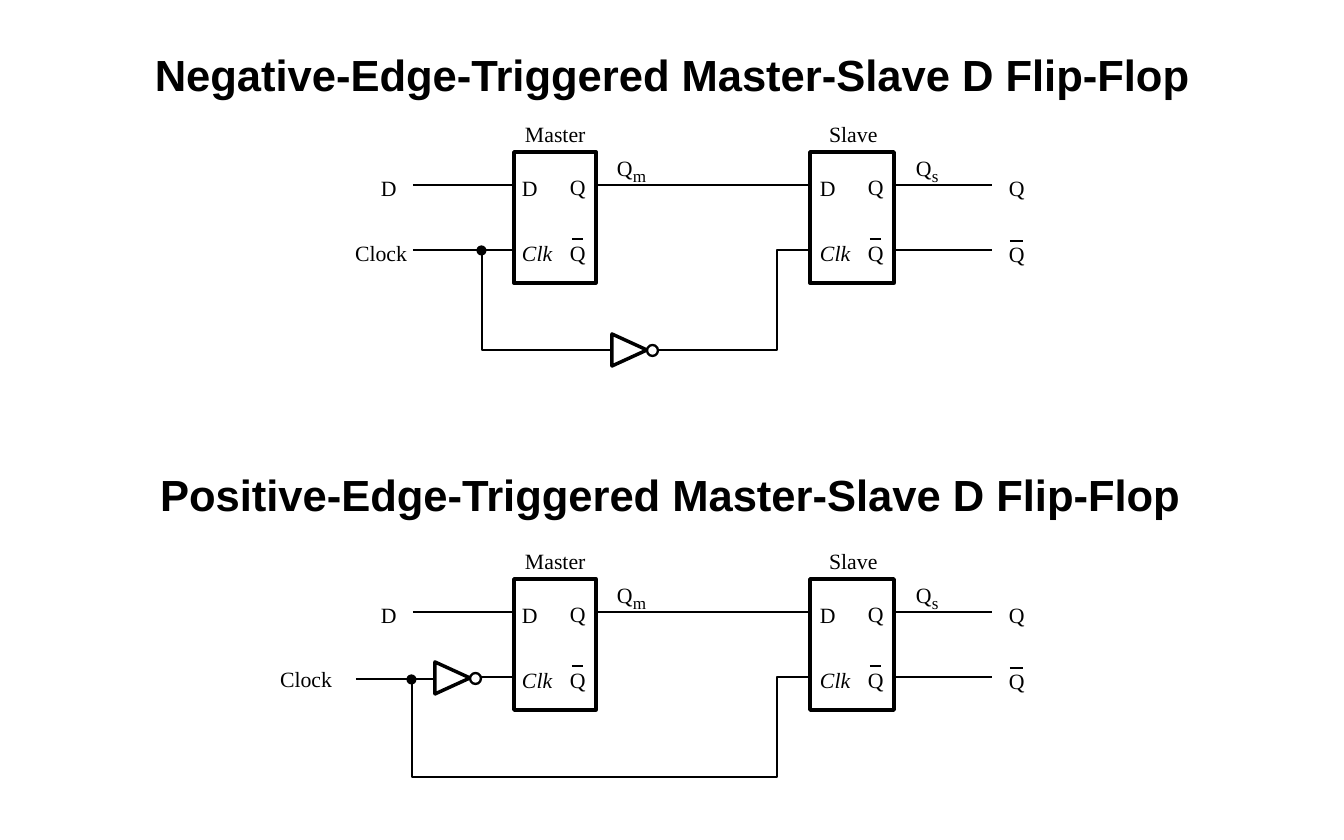
from lxml import etree
from pptx import Presentation
from pptx.dml.color import RGBColor
from pptx.enum.shapes import MSO_CONNECTOR, MSO_SHAPE
from pptx.enum.text import MSO_ANCHOR, MSO_AUTO_SIZE, PP_ALIGN
from pptx.oxml.ns import qn
from pptx.util import Pt

STRAIGHT = MSO_CONNECTOR.STRAIGHT
RECT, OVAL = MSO_SHAPE.RECTANGLE, MSO_SHAPE.OVAL
MIDDLE, CENTER, GROW = MSO_ANCHOR.MIDDLE, PP_ALIGN.CENTER, MSO_AUTO_SIZE.SHAPE_TO_FIT_TEXT
PX = 914400 / 112
COLORS = {"ink": "000000", "paper": "FFFFFF"}
INK, PAPER = (RGBColor.from_string(COLORS[k]) for k in ("ink", "paper"))
TITLE = {"name": "Arial", "size": Pt(28), "bold": True}
LABEL = {"name": "Times New Roman", "size": Pt(14)}
CLK = {**LABEL, "italic": True}
SUB = {**LABEL, "size": Pt(11)}


def px(*lengths):
    return [round(v * PX) for v in lengths]


def outline(shape, width, fill=None):
    shape.shadow.inherit = False
    shape.line.color.rgb = INK
    shape.line.width = Pt(width)
    if fill is None:
        shape.fill.background()
    else:
        shape.fill.solid()
        shape.fill.fore_color.rgb = fill


prs = Presentation()
prs.slide_width, prs.slide_height = px(1344, 840)
s = prs.slides.add_slide(prs.slide_layouts[6])

# Titles
for x, y, edge in [(112, 37, "Negative"), (110, 457, "Positive")]:
    tf = s.shapes.add_textbox(*px(x, y, 1120, 75)).text_frame
    tf.word_wrap = True
    tf.vertical_anchor = MIDDLE
    p = tf.paragraphs[0]
    p.alignment = CENTER
    r = p.add_run()
    r.text = edge + "-Edge-Triggered Master-Slave D Flip-Flop"
    r.font.color.rgb = INK
    for name, value in TITLE.items():
        setattr(r.font, name, value)

# Parts shared by both circuits; y is counted from the top of the first one
latches = [("Master", 514, 82, 8, 525, 62), ("Slave", 810, 84, 10, 829, 55)]
shared_wires = [(413, 185, 514, 185), (596, 185, 810, 185),
                (894, 185, 992, 185), (894, 250, 992, 250)]
shared_labels = [("D", 381, 175, 21, LABEL),
                 ("Q", 1009, 175, 21, LABEL), ("Q", 1009, 241, 21, LABEL),
                 ("Q", 617, 155, 21, LABEL), ("m", 633, 165, 18, SUB),
                 ("Q", 916, 155, 21, LABEL), ("s", 932, 165, 11, SUB)]
slave_clock = [(810, 250), (777, 250), (777, 350), (680, 350)]

# What differs: where the clock enters, branches and is inverted
circuits = [
    {"dy": 0, "clock": (355, 240), "dot": (481, 250), "inverter": (612, 350),
     "path": [(413, 250), (482, 250), (482, 350), (579, 350)],
     "wires": [(482, 250, 514, 250), (579, 350, 612, 350), (658, 350, 680, 350)]},
    {"dy": 427, "clock": (280, 239), "dot": (411, 252), "inverter": (435, 251),
     "path": [(356, 252), (412, 252), (412, 350), (494, 350)],
     "wires": [(480, 250, 514, 250), (400, 252, 433, 252), (489, 350, 691, 350)]},
]

for c in circuits:
    dy = c["dy"]
    shapes = s.shapes.add_group_shape().shapes
    wires = [(*w, 1.5) for w in shared_wires + c["wires"]]
    bars = [(1010, 241, 1023, 241, 1.38)]
    labels = shared_labels + [("Clock", *c["clock"], 58, LABEL)]

    # Master and slave latches
    for name, x, w, inset, name_x, name_w in latches:
        outline(shapes.add_shape(RECT, *px(x, 152 + dy, w, 131)), 2.25, PAPER)
        left, right = x + inset, x + inset + 48
        bars.append((right + 2, 239, right + 13, 239, 1.38))
        labels += [(name, name_x, 121, name_w, LABEL),
                   ("D", left, 175, 21, LABEL), ("Q", right, 174, 21, LABEL),
                   ("Clk", left, 240, 37, CLK), ("Q", right, 240, 21, LABEL)]

    # Clock paths
    for points in (slave_clock, c["path"]):
        (x, y), *rest = [(x, y + dy) for x, y in points]
        fb = shapes.build_freeform(x, y, scale=PX)
        fb.add_line_segments(rest, close=False)
        outline(fb.convert_to_shape(), 1.5)

    # Wires and the bars over inverted outputs
    for x1, y1, x2, y2, width in wires + bars:
        line = shapes.add_connector(STRAIGHT, *px(x1, y1 + dy, x2, y2 + dy))
        line.line.color.rgb = INK
        line.line.width = Pt(width)
        etree.SubElement(line._element.spPr, qn("a:effectLst"))

    # Inverter and branch dot
    x, y = c["inverter"]
    y += dy
    fb = shapes.build_freeform(x + 35, y, scale=PX)
    fb.add_line_segments([(x, y + 16), (x, y - 16)], close=True)
    outline(fb.convert_to_shape(), 2.25, PAPER)
    outline(shapes.add_shape(OVAL, *px(x + 35, y - 5, 11, 11)), 1.5, PAPER)
    x, y = c["dot"]
    outline(shapes.add_shape(OVAL, *px(x - 4, y - 4 + dy, 9, 9)), 0.75, INK)

    # Labels
    for text, x, y, w, font in labels:
        tf = shapes.add_textbox(*px(x, y + dy, w, 21 if font is SUB else 27)).text_frame
        tf.margin_left = tf.margin_right = tf.margin_top = tf.margin_bottom = 0
        tf.word_wrap = False
        tf.auto_size = GROW
        r = tf.paragraphs[0].add_run()
        r.text = text
        r.font.color.rgb = INK
        for name, value in font.items():
            setattr(r.font, name, value)

prs.save("out.pptx")
